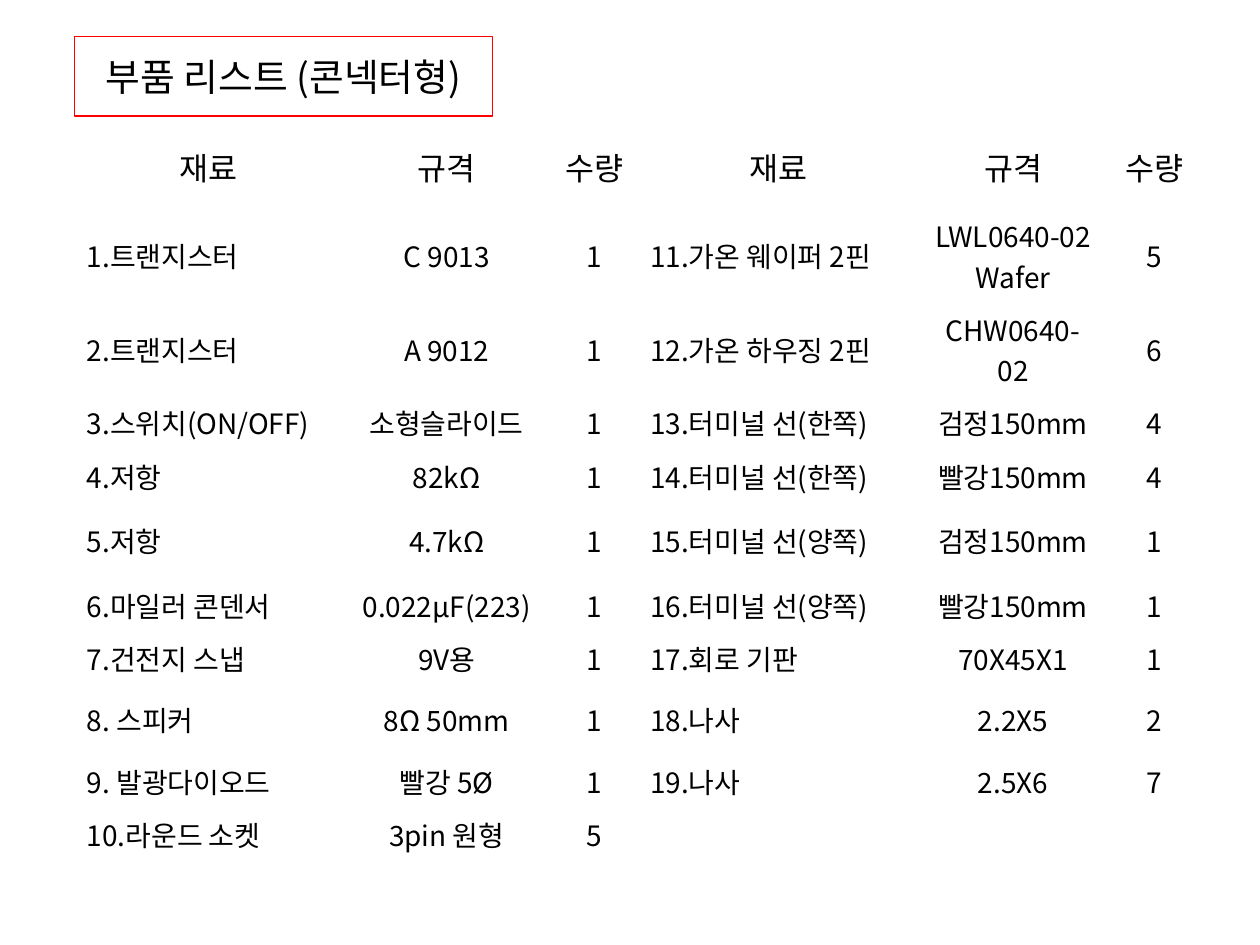
from lxml import etree
from pptx import Presentation
from pptx.dml.color import RGBColor
from pptx.enum.text import MSO_ANCHOR, MSO_AUTO_SIZE, PP_ALIGN
from pptx.oxml.ns import qn
from pptx.util import Inches, Pt

LEFT, CENTER = PP_ALIGN.LEFT, PP_ALIGN.CENTER
MIDDLE = MSO_ANCHOR.MIDDLE
NO_AUTOFIT = MSO_AUTO_SIZE.NONE
FONT = "Noto Sans CJK KR"


def color(value):
    return RGBColor.from_string(value)


def write(paragraph, text, size, align):
    paragraph.alignment = align
    run = paragraph.add_run()
    run.text = text
    run.font.color.rgb = color("000000")
    for key, value in {"name": FONT, "size": Pt(size), "bold": False}.items():
        setattr(run.font, key, value)
    etree.SubElement(run._r.get_or_add_rPr(), qn("a:ea"), typeface=FONT)


prs = Presentation()
prs.slide_width, prs.slide_height = Inches(10), Inches(7.5)
slide = prs.slides.add_slide(prs.slide_layouts[5])

# Title in a red frame
title = slide.shapes.title
title_box = {"left": 0.59, "top": 0.29, "width": 3.32, "height": 0.63}
for key, value in title_box.items():
    setattr(title, key, Inches(value))
title.line.color.rgb = color("FF0000")
title.line.width = Pt(0.75)
frame_format = {"word_wrap": True, "auto_size": NO_AUTOFIT,
                "vertical_anchor": MIDDLE}
for key, value in frame_format.items():
    setattr(title.text_frame, key, value)
write(title.text_frame.paragraphs[0], "부품 리스트 (콘넥터형)", 21.6, CENTER)

# Parts: material, specification, quantity, in two halves
header = ("재료", "규격", "수량")
parts = [
    ("1.트랜지스터", "C 9013", "1"),
    ("2.트랜지스터", "A 9012", "1"),
    ("3.스위치(ON/OFF)", "소형슬라이드", "1"),
    ("4.저항", "82kΩ", "1"),
    ("5.저항", "4.7kΩ", "1"),
    ("6.마일러 콘덴서", "0.022μF(223)", "1"),
    ("7.건전지 스냅", "9V용", "1"),
    ("8. 스피커", "8Ω 50mm", "1"),
    ("9. 발광다이오드", "빨강 5Ø", "1"),
    ("10.라운드 소켓", "3pin 원형", "5"),
    ("11.가온 웨이퍼 2핀", "LWL0640-02 Wafer", "5"),
    ("12.가온 하우징 2핀", "CHW0640-02", "6"),
    ("13.터미널 선(한쪽)", "검정150mm", "4"),
    ("14.터미널 선(한쪽)", "빨강150mm", "4"),
    ("15.터미널 선(양쪽)", "검정150mm", "1"),
    ("16.터미널 선(양쪽)", "빨강150mm", "1"),
    ("17.회로 기판", "70X45X1", "1"),
    ("18.나사", "2.2X5", "2"),
    ("19.나사", "2.5X6", "7"),
]
column_widths = [2.13, 1.65, 0.69, 2.23, 1.5, 0.74]
row_heights = [0.67, 0.64, 0.64, 0.38, 0.43, 0.6, 0.38, 0.38, 0.56, 0.33, 0.33]
parts_per_half = len(row_heights) - 1

# Table without banding or fills
parts_table = slide.shapes.add_table(
    len(row_heights), len(column_widths), Inches(0.59), Inches(0.99),
    Inches(sum(column_widths)), Inches(sum(row_heights))).table
for key, value in {"first_row": False, "horz_banding": False}.items():
    setattr(parts_table, key, value)
for column, width in zip(parts_table.columns, column_widths):
    column.width = Inches(width)
for row, height in zip(parts_table.rows, row_heights):
    row.height = Inches(height)
for cell in parts_table.iter_cells():
    cell.fill.background()
    cell.vertical_anchor = MIDDLE

# Header and entries of each half
for half in range(2):
    start = half * parts_per_half
    entries = [header] + parts[start:start + parts_per_half]
    for row_number, entry in enumerate(entries):
        for field, text in enumerate(entry):
            cell = parts_table.cell(row_number, half * len(header) + field)
            is_header = row_number == 0
            write(cell.text_frame.paragraphs[0], text, 18 if is_header else 16,
                  CENTER if is_header or field > 0 else LEFT)

prs.save("out.pptx")
